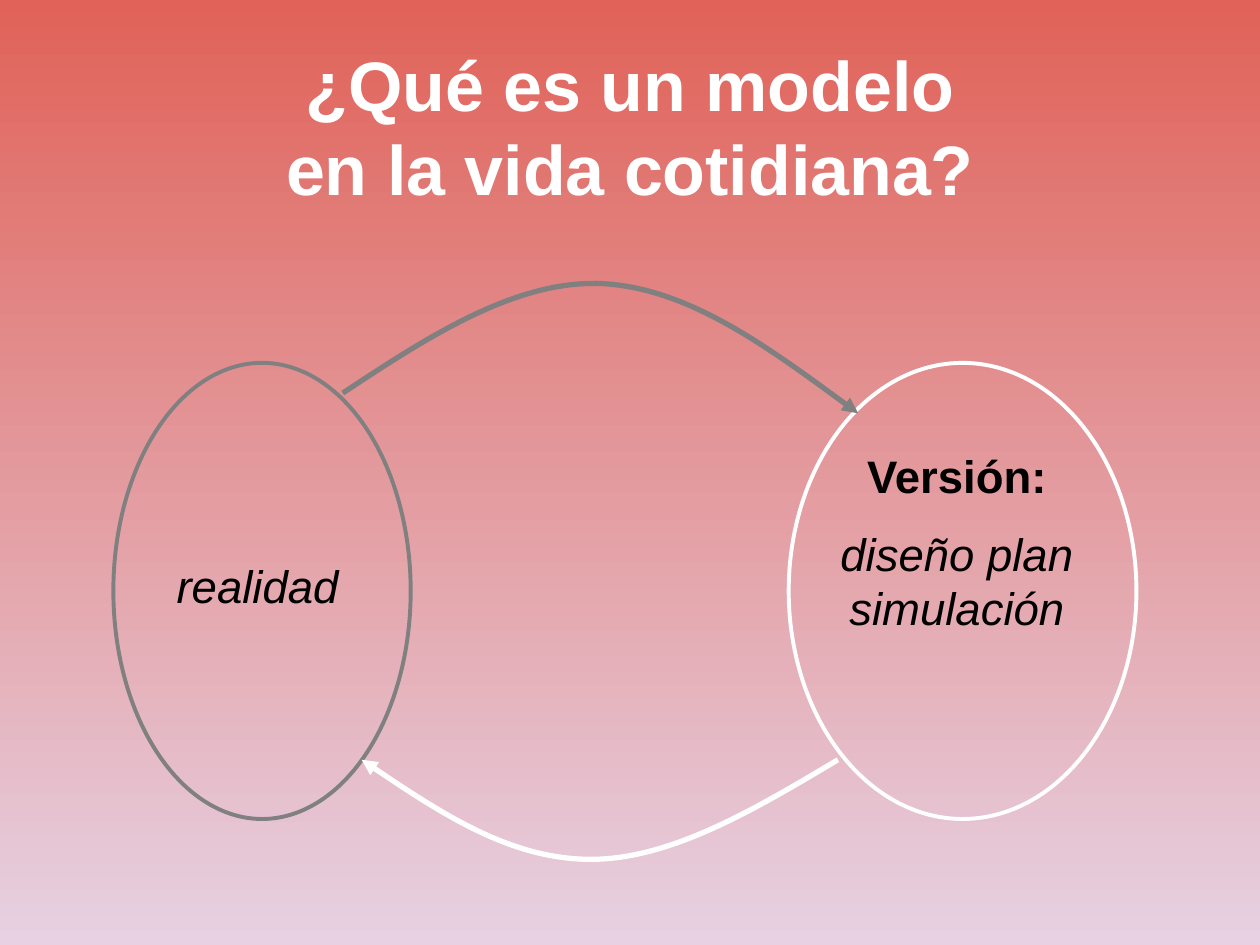
from dataclasses import dataclass

from lxml.etree import SubElement
from pptx import Presentation
from pptx.dml.color import RGBColor
from pptx.enum.shapes import MSO_SHAPE as Shape
from pptx.enum.text import MSO_ANCHOR as Anchor, MSO_AUTO_SIZE as AutoSize, PP_ALIGN as Align
from pptx.oxml.ns import qn
from pptx.util import Inches, Pt

WHITE = RGBColor(0xFF, 0xFF, 0xFF)
GRAY = RGBColor(0x80, 0x80, 0x80)
BLACK = RGBColor(0, 0, 0)
RED = RGBColor(0xE0, 0x62, 0x58)
PINK = RGBColor(0xE7, 0xD1, 0xE2)
OVAL_TOP, OVAL_HEIGHT = 2.88, 3.62


@dataclass
class Oval:
    left: float
    width: float
    color: RGBColor


@dataclass
class Arrow:
    """A start point followed by three points for each Bézier segment."""
    points: list[tuple[float, float]]
    color: RGBColor


OVALS = [Oval(0.9, 2.36, GRAY), Oval(6.26, 2.76, WHITE)]
ARROWS = [
    Arrow([(2.72, 3.12), (3.4, 2.67), (4.08, 2.23), (4.76, 2.25),
           (5.45, 2.28), (6.13, 2.78), (6.81, 3.28)], GRAY),
    Arrow([(6.65, 6.03), (5.98, 6.43), (5.32, 6.82), (4.69, 6.82),
           (4.06, 6.82), (3.46, 6.43), (2.87, 6.03)], WHITE),
]


def style_outline(sp, color: RGBColor, width: float) -> None:
    sp.shadow.inherit = False
    sp.fill.background()
    sp.line.color.rgb = color
    sp.line.width = Pt(width)


def draw_oval(s, oval: Oval) -> None:
    sp = s.shapes.add_shape(Shape.OVAL, Inches(oval.left), Inches(OVAL_TOP),
                            Inches(oval.width), Inches(OVAL_HEIGHT))
    style_outline(sp, oval.color, 2.25)


def draw_arrow(s, arrow: Arrow) -> None:
    """Build the control polygon, then turn each three lines into one curve."""
    start, *rest = [(Inches(x), Inches(y)) for x, y in arrow.points]
    builder = s.shapes.build_freeform(*start)
    builder.add_line_segments(rest, close=False)
    sp = builder.convert_to_shape()
    style_outline(sp, arrow.color, 3)

    outline = next(sp.element.iter(qn("a:path")))
    lines = outline.findall(qn("a:lnTo"))
    for i in range(0, len(lines), 3):
        curve = SubElement(outline, qn("a:cubicBezTo"))
        for line in lines[i:i + 3]:
            curve.append(line[0])
            outline.remove(line)
    SubElement(sp.line._get_or_add_ln(), qn("a:tailEnd"), type="triangle")


def add_text(s, text: str, left: float, top: float, width: float, height: float):
    tf = s.shapes.add_textbox(Inches(left), Inches(top), Inches(width), Inches(height)).text_frame
    tf.word_wrap = True
    write(tf.paragraphs[0], text)
    return tf


def write(p, text: str, *, size: float = 26, color: RGBColor = BLACK,
          bold: bool = False, italic: bool = False, before: float = 13) -> None:
    p.text = text
    p.alignment = Align.CENTER
    p.space_before = Pt(before)
    for r in p.runs:
        r.font.name = "Arial"
        r.font.size = Pt(size)
        r.font.color.rgb = color
        r.font.bold = bold
        r.font.italic = italic


def main() -> None:
    prs = Presentation()
    prs.slide_width, prs.slide_height = Inches(10), Inches(7.5)
    s = prs.slides.add_slide(prs.slide_layouts[6])

    fill = s.background.fill
    fill.gradient()
    fill.gradient_angle = 270
    for stop, position, color in zip(fill.gradient_stops, (0, 1), (RED, PINK)):
        stop.position = position
        stop.color.rgb = color

    title = "¿Qué es un modelo\nen la vida cotidiana?"
    tf = add_text(s, title, 0.5, 0.3, 9, 1.4)
    tf.vertical_anchor = Anchor.MIDDLE
    write(tf.paragraphs[0], title, size=40, color=WHITE, bold=True, before=0)

    for oval in OVALS:
        draw_oval(s, oval)

    tf = add_text(s, "realidad", 1.22, 4.38, 1.65, 0.53)
    tf.auto_size = AutoSize.SHAPE_TO_FIT_TEXT
    write(tf.paragraphs[0], "realidad", italic=True)

    tf = add_text(s, "Versión:", 6.57, 3.51, 2.05, 2.05)
    tf.auto_size = AutoSize.SHAPE_TO_FIT_TEXT
    write(tf.paragraphs[0], "Versión:", bold=True)
    write(tf.add_paragraph(), "diseño plan simulación", italic=True)

    for arrow in ARROWS:
        draw_arrow(s, arrow)

    prs.save("out.pptx")


if __name__ == "__main__":
    main()
